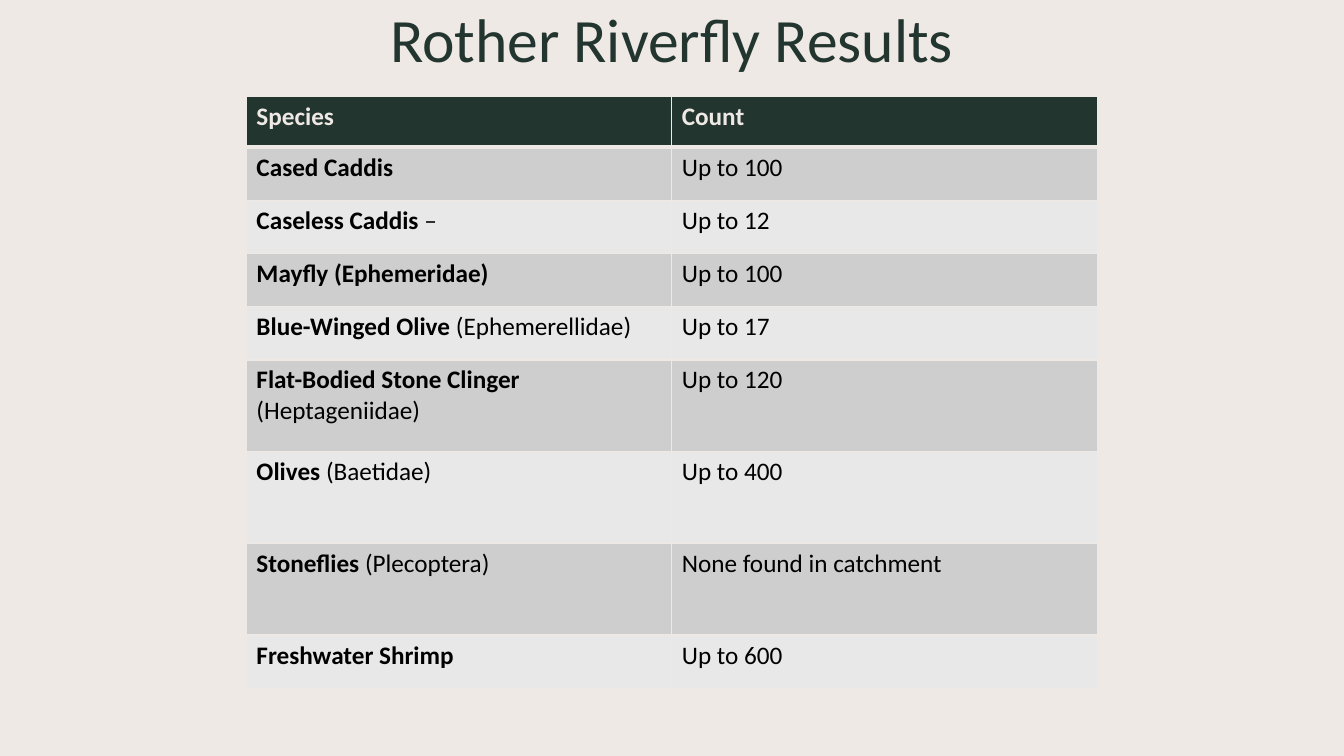
from pptx import Presentation
from pptx.dml.color import RGBColor
from pptx.enum.text import MSO_ANCHOR, PP_ALIGN
from pptx.oxml import parse_xml
from pptx.oxml.ns import nsdecls
from pptx.util import Cm, Pt

CREAM = RGBColor(0xEF, 0xE9, 0xE6)
DARK_GREEN = RGBColor(0x23, 0x35, 0x2F)
BAND_DARK = RGBColor(0xCD, 0xCE, 0xCD)
BAND_LIGHT = RGBColor(0xE8, 0xE8, 0xE8)
BLACK = RGBColor(0, 0, 0)
FONT = "Calibri"

# Bold species name, plain remainder, count, row height in cm
SPECIES_COUNTS = [
    ("Cased Caddis", "", "Up to 100", 1.34),
    ("Caseless Caddis ", "–", "Up to 12", 1.34),
    ("Mayfly (Ephemeridae)", "", "Up to 100", 1.34),
    ("Blue-Winged Olive ", "(Ephemerellidae)", "Up to 17", 1.34),
    ("Flat-Bodied Stone Clinger ", "(Heptageniidae)", "Up to 120", 2.31),
    ("Olives", " (Baetidae)", "Up to 400", 2.31),
    ("Stoneflies", " (Plecoptera)", "None found in catchment", 2.31),
    ("Freshwater Shrimp", "", "Up to 600", 1.34),
]
HEADER_HEIGHT = 1.27


def format_run(run, size, color, bold=False):
    run.font.name = FONT
    run.font.size = Pt(size)
    run.font.bold = bold
    run.font.color.rgb = color


def add_title(slide, wording):
    title = slide.shapes.title
    title.left, title.top, title.width, title.height = Cm(2.33), Cm(0), Cm(29.21), Cm(2.16)
    title.text_frame.text = wording
    title.text_frame.vertical_anchor = MSO_ANCHOR.MIDDLE
    heading = title.text_frame.paragraphs[0]
    heading.alignment = PP_ALIGN.CENTER
    heading.line_spacing = 0.9
    format_run(heading.runs[0], 44, DARK_GREEN)


def set_borders(cell, bottom_width):
    widths = {"lnL": 1, "lnR": 1, "lnT": 1, "lnB": bottom_width}
    properties = cell._tc.get_or_add_tcPr()
    # Borders come before the fill in the cell properties
    for position, (side, width) in enumerate(widths.items()):
        border = parse_xml(
            f'<a:{side} {nsdecls("a")} w="{Pt(width)}"><a:solidFill>'
            f'<a:srgbClr val="{CREAM}"/></a:solidFill></a:{side}>'
        )
        properties.insert(position, border)


def fill_cell(cell, fill, color, bold_text="", plain_text="", bottom_width=1):
    cell.fill.solid()
    cell.fill.fore_color.rgb = fill
    set_borders(cell, bottom_width)
    paragraph = cell.text_frame.paragraphs[0]
    for wording, bold in ((bold_text, True), (plain_text, False)):
        if wording:
            run = paragraph.add_run()
            run.text = wording
            format_run(run, 18, color, bold)


def add_results_table(slide):
    heights = [HEADER_HEIGHT] + [entry[3] for entry in SPECIES_COUNTS]
    results = slide.shapes.add_table(
        len(heights), 2, Cm(6.21), Cm(2.44), Cm(21.44), Cm(sum(heights))
    ).table
    for row, height in zip(results.rows, heights):
        row.height = Cm(height)

    # Header row with a thicker rule below it
    for column, heading in enumerate(("Species", "Count")):
        fill_cell(results.cell(0, column), DARK_GREEN, CREAM, heading, bottom_width=3)

    # Banded species rows; the first has the header's rule above it
    for index, (species, family, count, _) in enumerate(SPECIES_COUNTS, start=1):
        band = BAND_DARK if index % 2 else BAND_LIGHT
        fill_cell(results.cell(index, 0), band, BLACK, species, family)
        fill_cell(results.cell(index, 1), band, BLACK, plain_text=count)
    for cell in results.rows[1].cells:
        cell._tc.tcPr.find("{*}lnT").set("w", str(Pt(3)))


def main():
    presentation = Presentation()
    presentation.slide_width = Cm(33.87)
    presentation.slide_height = Cm(19.05)
    slide = presentation.slides.add_slide(presentation.slide_layouts[5])
    slide.background.fill.solid()
    slide.background.fill.fore_color.rgb = CREAM
    add_title(slide, "Rother Riverfly Results")
    add_results_table(slide)
    presentation.save("out.pptx")


if __name__ == "__main__":
    main()
